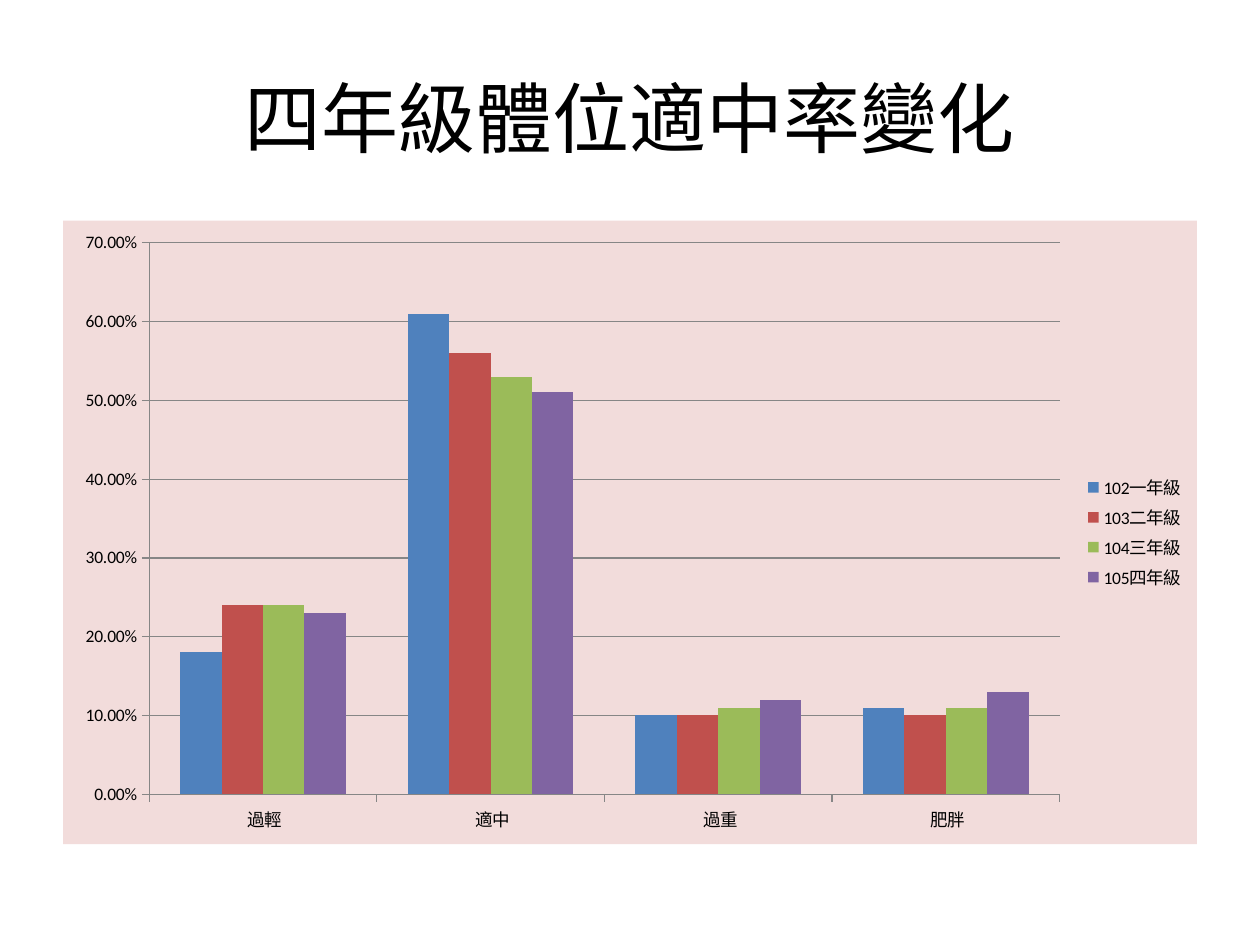
from lxml import etree
from pptx import Presentation
from pptx.chart.data import CategoryChartData
from pptx.dml.color import RGBColor
from pptx.enum.chart import XL_CHART_TYPE, XL_LEGEND_POSITION, XL_TICK_MARK
from pptx.enum.text import MSO_ANCHOR, PP_ALIGN
from pptx.oxml import parse_xml
from pptx.oxml.ns import nsdecls, qn
from pptx.util import Inches, Pt

FONT = "Calibri"
GRAY = "868686"
CATEGORIES = [" 過輕", " 適中", " 過重", " 肥胖"]
GRADES = [
    ("102一年級", "4F81BD", [0.18, 0.61, 0.10, 0.11]),
    ("103二年級", "C0504D", [0.24, 0.56, 0.10, 0.10]),
    ("104三年級", "9BBB59", [0.24, 0.53, 0.11, 0.11]),
    ("105四年級", "8064A2", [0.23, 0.51, 0.12, 0.13]),
]


def color(hex_value):
    return RGBColor.from_string(hex_value)


def area_format(fill_xml):
    """Return chart area properties with the given fill and no border."""
    return parse_xml(
        f'<c:spPr {nsdecls("c", "a")}>{fill_xml}<a:ln><a:noFill/></a:ln></c:spPr>'
    )


prs = Presentation()
prs.slide_width, prs.slide_height = Inches(10), Inches(7.5)
slide = prs.slides.add_slide(prs.slide_layouts[6])

# Title
title = slide.shapes.add_textbox(Inches(0.5), Inches(0.3), Inches(9), Inches(1.25))
title_frame = title.text_frame
title_frame.word_wrap = True
title_frame.vertical_anchor = MSO_ANCHOR.MIDDLE
title_frame.text = "四年級體位適中率變化"
heading = title_frame.paragraphs[0]
heading.alignment = PP_ALIGN.CENTER
heading.runs[0].font.size = Pt(44)
heading.runs[0].font.name = FONT
heading.runs[0].font.color.rgb = color("000000")

# Body weight shares by school year
weight_data = CategoryChartData(number_format="0.00%")
weight_data.categories = CATEGORIES
for grade, _, shares in GRADES:
    weight_data.add_series(grade, shares)
chart = slide.shapes.add_chart(
    XL_CHART_TYPE.COLUMN_CLUSTERED,
    Inches(0.5), Inches(1.75), Inches(9), Inches(4.95), weight_data,
).chart
chart.has_title = False
chart.font.size = Pt(10)
chart.font.name = FONT
chart.font.color.rgb = color("000000")

chart.has_legend = True
chart.legend.position = XL_LEGEND_POSITION.RIGHT
chart.legend.include_in_layout = False

columns = chart.plots[0]
columns.gap_width = 150
columns.overlap = 0
columns.vary_by_categories = False
for series, (_, fill, _) in zip(columns.series, GRADES):
    series.format.fill.solid()
    series.format.fill.fore_color.rgb = color(fill)

share_axis = chart.value_axis
share_axis.minimum_scale = 0
share_axis.maximum_scale = 0.7
share_axis.major_unit = 0.1
share_axis.tick_labels.number_format = "0.00%"
share_axis.tick_labels.number_format_is_linked = False
share_axis.has_major_gridlines = True
for axis in (chart.category_axis, share_axis):
    axis.major_tick_mark = XL_TICK_MARK.OUTSIDE
    axis.minor_tick_mark = XL_TICK_MARK.NONE
for line_owner in (chart.category_axis, share_axis, share_axis.major_gridlines):
    line_owner.format.line.color.rgb = color(GRAY)
    line_owner.format.line.width = Pt(0.75)

# Pink chart area showing through the plot area
chart_space = chart.element
chart_space.find(".//" + qn("c:plotArea")).append(area_format("<a:noFill/>"))
chart_space.find(qn("c:chart")).addnext(
    area_format('<a:solidFill><a:srgbClr val="F2DCDB"/></a:solidFill>')
)
rounded = chart_space.find(qn("c:roundedCorners"))
if rounded is None:
    rounded = etree.Element(qn("c:roundedCorners"))
    chart_space.find(qn("c:date1904")).addnext(rounded)
rounded.set("val", "0")

prs.save("out.pptx")
